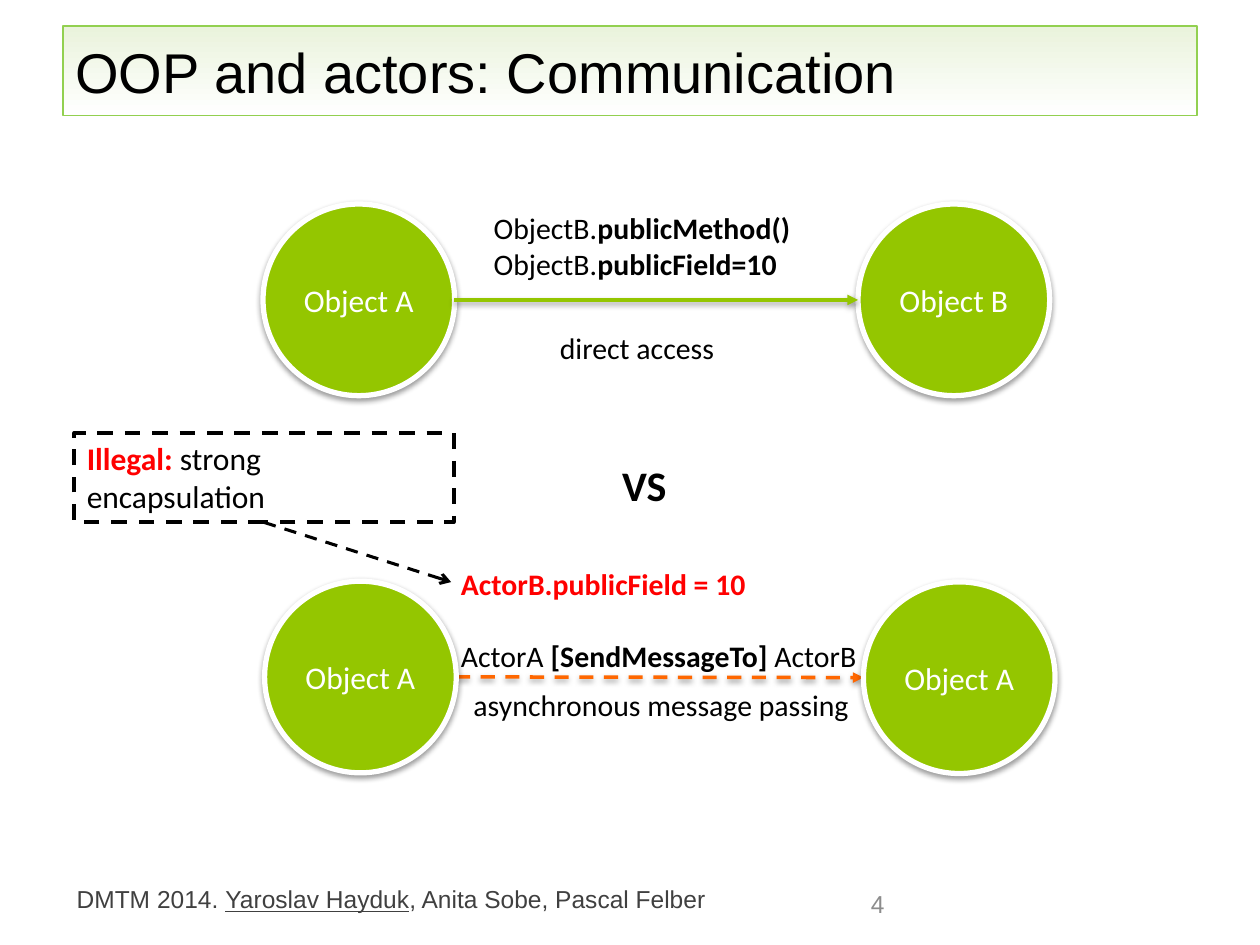
import pptx
import pptx.util
import pptx.dml.color
import pptx.enum.dml
import pptx.enum.shapes
import pptx.enum.text
import pptx.oxml
import pptx.oxml.ns

Pt = pptx.util.Pt
RGB = pptx.dml.color.RGBColor
SHAPE = pptx.enum.shapes.MSO_SHAPE
ALIGN = pptx.enum.text.PP_ALIGN
ANCHOR = pptx.enum.text.MSO_ANCHOR
DASH = pptx.enum.dml.MSO_LINE.DASH

BLACK = RGB(0, 0, 0)
WHITE = RGB(255, 255, 255)
RED = RGB(255, 0, 0)
GREEN = RGB(0x94, 0xC6, 0x00)
ORANGE = RGB(0xFF, 0x67, 0x00)
DARK_GREY = RGB(0x40, 0x40, 0x40)
GREY = RGB(0x8C, 0x8C, 0x8C)
TITLE_LINE = RGB(0x92, 0xD0, 0x50)
TITLE_TOP = RGB(0xEA, 0xF3, 0xDC)

# A run is (text, style); style is "" or letters: b bold, u underlined, r red
TITLE = [[("OOP and actors: Communication", "")]]
FOOTER = [[("DMTM 2014. ", ""), ("Yaroslav Hayduk", "u"),
           (", Anita Sobe, Pascal Felber", "")]]
NOTE = [[("Illegal: ", "br"), ("strong encapsulation", "")]]

# Left, top, width, height, size, space between paragraphs, alignment, text
LABELS = [
    (275, 116.6, 205, 48, 17, 0, ALIGN.LEFT,
     [[("ObjectB.", ""), ("publicMethod()", "b")],
      [("ObjectB.", ""), ("publicField=10", "b")]]),
    (256.3, 319.7, 291, 69, 17, 20.75, ALIGN.LEFT,
     [[("ActorB.publicField = 10", "br")],
      [("ActorA ", ""), ("[SendMessageTo]", "b"), (" ActorB", "")]]),
    (348.5, 259.2, 44, 65.5, 24, 0, ALIGN.LEFT, [[("VS", "b")]]),
    (263.5, 388.8, 266.5, 28, 17, 0, ALIGN.LEFT,
     [[("asynchronous message passing", "")]]),
    (257.8, 185, 212.4, 28, 17, 0, ALIGN.CENTER, [[("direct access", "")]]),
]

DIAMETER = 109.5
CIRCLES = [(150.3, 116.6, "Object A"), (490.3, 116.6, "Object B"),
           (151.2, 332.1, "Object A"), (493.4, 332.5, "Object A")]

SHADOW = ('<a:effectLst %s><a:outerShdw blurRad="39370" dist="20320" '
          'dir="5400000" rotWithShape="0"><a:srgbClr val="000000">'
          '<a:alpha val="38000"/></a:srgbClr></a:outerShdw></a:effectLst>'
          % pptx.oxml.ns.nsdecls("a"))
NO_EFFECT = "<a:effectLst %s/>" % pptx.oxml.ns.nsdecls("a")


def set_effect(s, xml):
    s._element.spPr.append(pptx.oxml.parse_xml(xml))


def write(s, paragraphs, size, font="Calibri", color=BLACK,
          align=ALIGN.LEFT, anchor=ANCHOR.TOP, gap=0):
    tf = s.text_frame
    tf.word_wrap = True
    tf.vertical_anchor = anchor
    for i, runs in enumerate(paragraphs):
        p = tf.add_paragraph() if i else tf.paragraphs[0]
        p.alignment = align
        if i and gap:
            p.space_before = Pt(gap)
        for text, style in runs:
            r = p.add_run()
            r.text = text
            r.font.name = font
            r.font.size = Pt(size)
            r.font.bold = "b" in style
            r.font.underline = "u" in style
            r.font.color.rgb = RED if "r" in style else color


def add_box(sp, kind, box, line, width):
    s = sp.add_shape(kind, *map(Pt, box))
    s.line.color.rgb = line
    s.line.width = Pt(width)
    return s


def add_text(sp, box, paragraphs, size, **style):
    write(sp.add_textbox(*map(Pt, box)), paragraphs, size, **style)


def add_arrow(sp, start, end, color, width, head, dashed, effect):
    c = sp.add_connector(pptx.enum.shapes.MSO_CONNECTOR.STRAIGHT,
                         *map(Pt, start + end))
    c.line.color.rgb = color
    c.line.width = Pt(width)
    if dashed:
        c.line.dash_style = DASH
    c.line._get_or_add_ln().append(pptx.oxml.parse_xml(
        '<a:tailEnd %s type="%s"/>' % (pptx.oxml.ns.nsdecls("a"), head)))
    set_effect(c, effect)
    return c


def main():
    prs = pptx.Presentation()
    prs.slide_width, prs.slide_height = Pt(720), Pt(540)
    sp = prs.slides.add_slide(prs.slide_layouts[6]).shapes

    add_text(sp, (36.7, 501.8, 425.5, 24.5), FOOTER, 14,
             font="Arial", color=DARK_GREY)
    title = add_box(sp, SHAPE.RECTANGLE, (36, 15, 648, 51), TITLE_LINE, 1)
    title.shadow.inherit = False
    title.fill.gradient()
    title.fill.gradient_angle = 270
    for stop, color in zip(title.fill.gradient_stops, (TITLE_TOP, WHITE)):
        stop.color.rgb = color
    write(title, TITLE, 32, font="Arial", anchor=ANCHOR.MIDDLE)
    add_text(sp, (473, 501.8, 57, 28.8), [[("4", "")]], 14, font="Arial",
             color=GREY, align=ALIGN.CENTER, anchor=ANCHOR.MIDDLE)

    add_arrow(sp, (260.6, 386.8), (493.4, 387.2), ORANGE, 2, "triangle",
              True, SHADOW)
    for *box, size, gap, align, paragraphs in LABELS:
        add_text(sp, box, paragraphs, size, align=align, gap=gap)

    note = add_box(sp, SHAPE.RECTANGLE, (42.5, 247.5, 216.7, 51), BLACK, 2.25)
    note.shadow.inherit = False
    note.fill.background()
    note.line.dash_style = DASH
    write(note, NOTE, 18)
    pointer = add_arrow(sp, (150.8, 298.5), (257.8, 332.6), BLACK, 1.75,
                        "arrow", True, NO_EFFECT)
    pointer.begin_connect(note, 2)

    for left, top, name in CIRCLES:
        s = add_box(sp, SHAPE.OVAL, (left, top, DIAMETER, DIAMETER), WHITE, 3)
        s.fill.solid()
        s.fill.fore_color.rgb = GREEN
        set_effect(s, SHADOW)
        write(s, [[(name, "")]], 18, color=WHITE, align=ALIGN.CENTER,
              anchor=ANCHOR.MIDDLE)
    add_arrow(sp, (259.5, 171.4), (490.3, 171.4), GREEN, 2, "triangle",
              False, SHADOW)

    prs.save("out.pptx")


if __name__ == "__main__":
    main()
